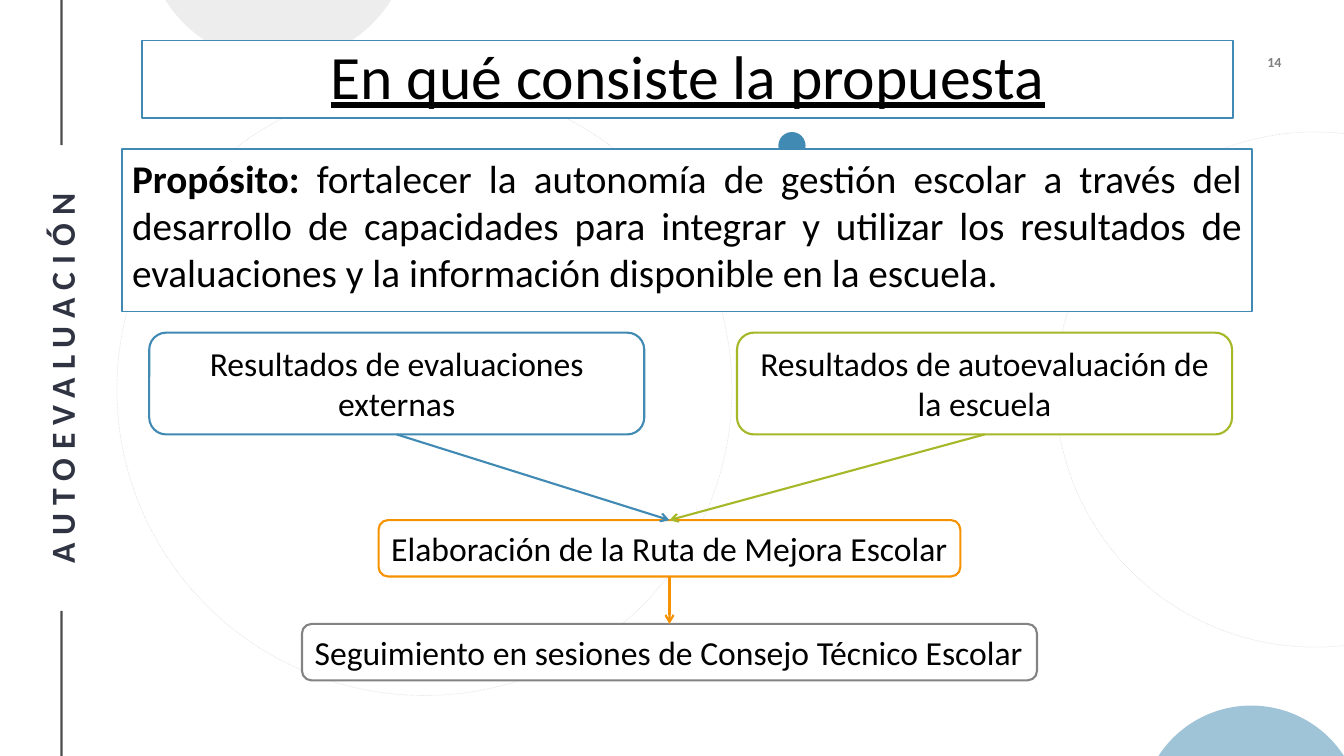
import math
import pptx
import pptx.util
import pptx.dml.color
import pptx.enum.dml
import pptx.enum.shapes
import pptx.enum.text
import pptx.oxml.ns
from lxml import etree

Inches, Pt = pptx.util.Inches, pptx.util.Pt
SHAPE = pptx.enum.shapes.MSO_SHAPE
ALIGN = pptx.enum.text.PP_ALIGN
ANCHOR = pptx.enum.text.MSO_ANCHOR
AUTO = pptx.enum.text.MSO_AUTO_SIZE
qn = pptx.oxml.ns.qn

W, H = 13.33, 7.5
FONT = "Calibri"
BLACK, WHITE, NAVY = "000000", "FFFFFF", "2F3342"
BLUE, GREEN, ORANGE, GRAY, PALE = "418AB3", "A6B727", "F69200", "838383", "DDDDDD"


def paint(fill, color, alpha=100):
    fill.solid()
    fill.fore_color.rgb = pptx.dml.color.RGBColor.from_string(color)
    if alpha < 100:
        clr = fill._xPr.find(qn("a:solidFill"))[0]
        etree.SubElement(clr, qn("a:alpha")).set("val", str(alpha * 1000))


def style(sp, fill=None, line=None, width=1, fill_alpha=100, line_alpha=100):
    if fill:
        paint(sp.fill, fill, fill_alpha)
    else:
        sp.fill.background()
    if line:
        sp.line.width = Pt(width)
        paint(sp.line.fill, line, line_alpha)
    else:
        sp.line.fill.background()


def add_shape(s, kind, box, **look):
    sp = s.shapes.add_shape(kind, *map(Inches, box))
    sp.shadow.inherit = False
    style(sp, **look)
    return sp


def add_line(s, start, end, color, alpha=100, arrow=False):
    cx = s.shapes.add_connector(pptx.enum.shapes.MSO_CONNECTOR.STRAIGHT,
                                *map(Inches, start + end))
    cx.line.width = Pt(1.5)
    paint(cx.line.fill, color, alpha)
    if arrow:
        etree.SubElement(cx.line._get_or_add_ln(), qn("a:tailEnd")).set("type", "arrow")
    etree.SubElement(cx._element.spPr, qn("a:effectLst"))
    return cx


def write(sp, runs, size, align, anchor, wrap=True, color=BLACK, alpha=100, margin=None):
    """Fill the first paragraph with (text, bold) runs."""
    tf = sp.text_frame
    tf.word_wrap, tf.auto_size, tf.vertical_anchor = wrap, AUTO.NONE, anchor
    if margin is not None:
        tf.margin_left = tf.margin_right = Inches(margin)
        tf.margin_top = tf.margin_bottom = Inches(margin)
    p = tf.paragraphs[0]
    p.alignment = align
    p.space_before = Pt(0)
    for text, bold in runs:
        r = p.add_run()
        r.text = text
        r.font.name, r.font.size, r.font.bold = FONT, Pt(size), bold
        paint(r.font.fill, color, alpha)
    return p


def add_segment(s, cx, edge, half, rise, color):
    """Part of a circle that rises from a slide edge; negative rise points up."""
    radius = (half ** 2 + rise ** 2) / (2 * abs(rise))
    reach = math.asin(half / radius)
    sign = math.copysign(1, rise)
    cy = edge + rise - sign * radius
    angles = [reach * (i / 30 - 1) for i in range(61)]
    points = [(Inches(cx + radius * math.sin(a)),
               Inches(cy + sign * radius * math.cos(a))) for a in angles]
    fb = s.shapes.build_freeform(*points[0], scale=1.0)
    fb.add_line_segments(points[1:], close=True)
    sp = fb.convert_to_shape()
    sp.shadow.inherit = False
    style(sp, fill=color, fill_alpha=50)


def backdrop(s):
    # Large dotted rings, dot and cut circles
    for box in [(10.47, 1.31, 5.14, 5.11), (1.16, 0.83, 6.1, 6.07)]:
        ring = add_shape(s, SHAPE.OVAL, box, line=BLACK, width=0.5, line_alpha=10)
        ring.line.dash_style = pptx.enum.dml.MSO_LINE.ROUND_DOT
    add_shape(s, SHAPE.OVAL, (7.72, 1.31, 0.27, 0.27), fill=BLUE)
    add_segment(s, 12.41, H, 0.92, -0.5, BLUE)
    add_segment(s, 2.76, 0, 1.12, 0.62, PALE)


def sidebar(s, x):
    # Section name between two vertical rules
    for top, bottom in [(0, 1.44), (6.06, H)]:
        add_line(s, (x, top), (x, bottom), BLACK, alpha=70)
    w, h = 4.61, 0.45
    sp = s.shapes.add_textbox(*map(Inches, (x - w / 2, 3.53, w, h)))
    sp.rotation = 270
    p = write(sp, [("AUTOEVALUACIÓN", True)], 24, ALIGN.CENTER, ANCHOR.MIDDLE,
              color=NAVY, margin=0.02)
    p.runs[0].font._element.set("spc", "600")


def page_number(s, box):
    sp = s.shapes.add_textbox(*map(Inches, box))
    write(sp, [("14", True)], 10, ALIGN.RIGHT, ANCHOR.MIDDLE, alpha=50, margin=0)


def place(sp, box):
    sp.left, sp.top, sp.width, sp.height = map(Inches, box)
    style(sp, fill=WHITE, line=BLUE)


def title(s, box):
    sp = s.shapes.title
    place(sp, box)
    p = write(sp, [("En qué consiste la propuesta", False)], 44, ALIGN.CENTER, ANCHOR.MIDDLE)
    p.line_spacing = 0.9
    p.runs[0].font.underline = True


def purpose(s, box):
    sp = s.placeholders[1]
    place(sp, box)
    pPr = sp.text_frame.paragraphs[0]._p.get_or_add_pPr()
    pPr.set("marL", "0")
    pPr.set("indent", "0")
    etree.SubElement(pPr, qn("a:buNone"))
    write(sp, [("Propósito: ", True),
               ("fortalecer la autonomía de gestión escolar a través del desarrollo de "
                "capacidades para integrar y utilizar los resultados de evaluaciones y la "
                "información disponible en la escuela.", False)],
          28, ALIGN.JUSTIFY, ANCHOR.TOP)


def step(s, text, box, color, align=ALIGN.CENTER, wrap=True):
    sp = add_shape(s, SHAPE.ROUNDED_RECTANGLE, box, fill=WHITE, line=color, width=1.5)
    write(sp, [(text, False)], 24, align, ANCHOR.TOP, wrap)
    return sp


def flow(s, x, y):
    # Two sources lead to the plan, and the plan to its follow-up
    w, h = 4.91, 1.01
    external = step(s, "Resultados de evaluaciones externas", (x, y, w, h), BLUE)
    internal = step(s, "Resultados de autoevaluación de la escuela",
                    (x + 5.83, y, w, h), GREEN)
    mid = x + 5.16
    plan, follow_up = [
        step(s, text, (mid - width / 2, y + dy, width, 0.56), color, ALIGN.LEFT, False)
        for text, dy, width, color in [
            ("Elaboración de la Ruta de Mejora Escolar", 1.86, 5.77, ORANGE),
            ("Seguimiento en sesiones de Consejo Técnico Escolar", 2.89, 7.29, GRAY)]]
    for start, end, color in [(external, plan, BLUE), (internal, plan, GREEN),
                              (plan, follow_up, ORANGE)]:
        cx = add_line(s, (x, y), (mid, y), color, arrow=True)
        cx.begin_connect(start, 2)
        cx.end_connect(end, 0)


def main():
    prs = pptx.Presentation()
    prs.slide_width, prs.slide_height = Inches(W), Inches(H)
    s = prs.slides.add_slide(prs.slide_layouts[1])
    # Placeholders go above the backdrop
    holders = [s.placeholders[1]._element, s.shapes.title._element]
    backdrop(s)
    sidebar(s, 0.61)
    page_number(s, (11.94, 0.48, 0.77, 0.27))
    for el in holders:
        s.shapes._spTree.append(el)
    purpose(s, (1.21, 1.48, 11.21, 1.61))
    title(s, (1.41, 0.4, 10.82, 0.77))
    flow(s, 1.48, 3.3)
    prs.save("out.pptx")


if __name__ == "__main__":
    main()
